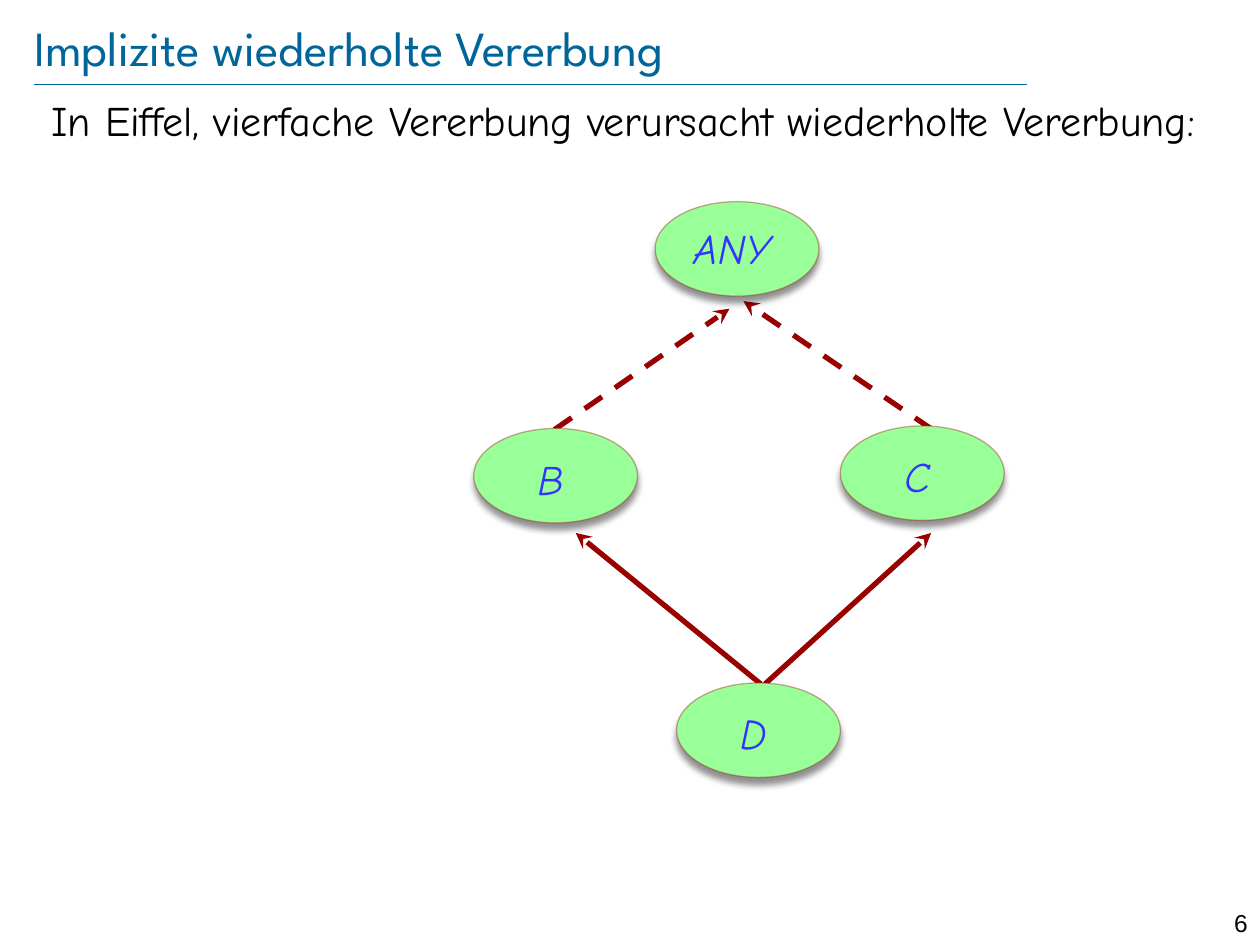
from lxml.etree import SubElement
from pptx import Presentation
from pptx.dml.color import RGBColor
from pptx.enum.dml import MSO_LINE
from pptx.enum.shapes import MSO_CONNECTOR, MSO_SHAPE
from pptx.enum.text import MSO_ANCHOR, PP_ALIGN
from pptx.oxml.ns import qn
from pptx.util import Inches, Pt

BLUE, RED, GREEN, INK = "006699", "990000", "99FF99", "3333FF"
HAND = "Comic Neue"
NODE_W, NODE_H = 1.3, 0.75


def color(code):
    return RGBColor.from_string(code)


def style(frame, font, size, code, align=PP_ALIGN.LEFT, italic=False):
    para = frame.paragraphs[0]
    para.alignment = align
    for run in para.runs:
        run.font.name = font
        run.font.size = Pt(size)
        run.font.italic = italic
        run.font.color.rgb = color(code)


def add_title(slide, text):
    title = slide.shapes.title
    title.left, title.top = Inches(0.27), Inches(0.13)
    title.width, title.height = Inches(8.88), Inches(0.48)
    frame = title.text_frame
    frame.text = text
    frame.margin_left = frame.margin_right = 0
    frame.margin_top = frame.margin_bottom = 0
    frame.vertical_anchor = MSO_ANCHOR.MIDDLE
    style(frame, "League Spartan", 28, BLUE)


def add_text(slide, text, x, y, w, h, font, size, code, **look):
    box = slide.shapes.add_textbox(Inches(x), Inches(y), Inches(w), Inches(h))
    frame = box.text_frame
    frame.word_wrap = True
    frame.text = text
    style(frame, font, size, code, **look)


def add_line(slide, start, end, code, width):
    line = slide.shapes.add_connector(
        MSO_CONNECTOR.STRAIGHT, *(Inches(v) for v in start + end))
    line.line.color.rgb = color(code)
    line.line.width = Pt(width)
    SubElement(line._element.spPr, qn("a:effectLst"))
    return line


def add_arrow(slide, start, end, dash=False):
    line = add_line(slide, start, end, RED, 3).line
    if dash:
        line.dash_style = MSO_LINE.DASH
    SubElement(line._get_or_add_ln(), qn("a:tailEnd"), type="stealth")


def add_node(slide, name, x, y, drop=0.15):
    oval = slide.shapes.add_shape(
        MSO_SHAPE.OVAL, Inches(x), Inches(y), Inches(NODE_W), Inches(NODE_H))
    oval.fill.solid()
    oval.fill.fore_color.rgb = color(GREEN)
    oval.line.color.rgb = color(RED)
    oval.line.width = Pt(0.75)
    oval.shadow.inherit = False

    # Faint outline and soft shadow below
    props = oval._element.spPr
    tint = props.find(".//" + qn("a:ln")).find(".//" + qn("a:srgbClr"))
    SubElement(tint, qn("a:alpha"), val="34000")
    shade = SubElement(props.find(qn("a:effectLst")), qn("a:outerShdw"),
                       blurRad=str(Pt(4)), dist=str(Pt(4)),
                       dir="5400000", rotWithShape="0")
    black = SubElement(shade, qn("a:srgbClr"), val="000000")
    SubElement(black, qn("a:alpha"), val="43000")

    # The label is wider than its oval
    add_text(slide, name, x - 0.27, y + drop, 1.76, 0.5, HAND, 24, INK,
             align=PP_ALIGN.CENTER, italic=True)


def main():
    deck = Presentation()
    deck.slide_width, deck.slide_height = Inches(10), Inches(7.5)
    slide = deck.slides.add_slide(deck.slide_layouts[5])

    # Heading, rule, page number and lead sentence
    add_line(slide, (0.27, 0.67), (8.15, 0.67), BLUE, 0.25)
    add_text(slide, "6", 9.45, 7.16, 0.55, 0.24, "Arial", 14, "000000",
             align=PP_ALIGN.RIGHT)
    add_title(slide, "Implizite wiederholte Vererbung")
    add_text(slide,
             "In Eiffel, vierfache Vererbung verursacht wiederholte Vererbung:",
             0.31, 0.7, 9.4, 0.6, HAND, 24, "000000")

    # Implicit (dashed) and explicit inheritance
    add_arrow(slide, (4.4, 3.41), (5.79, 2.45), dash=True)
    add_arrow(slide, (7.4, 3.41), (5.9, 2.39), dash=True)
    add_arrow(slide, (6.07, 5.43), (7.39, 4.23))
    add_arrow(slide, (6.04, 5.43), (4.57, 4.23))

    # Classes
    add_node(slide, "C", 6.67, 3.38)
    add_node(slide, "B", 3.76, 3.4)
    add_node(slide, "D", 5.37, 5.42)
    add_node(slide, "ANY", 5.2, 1.6, drop=0.12)

    deck.save("out.pptx")


if __name__ == "__main__":
    main()
